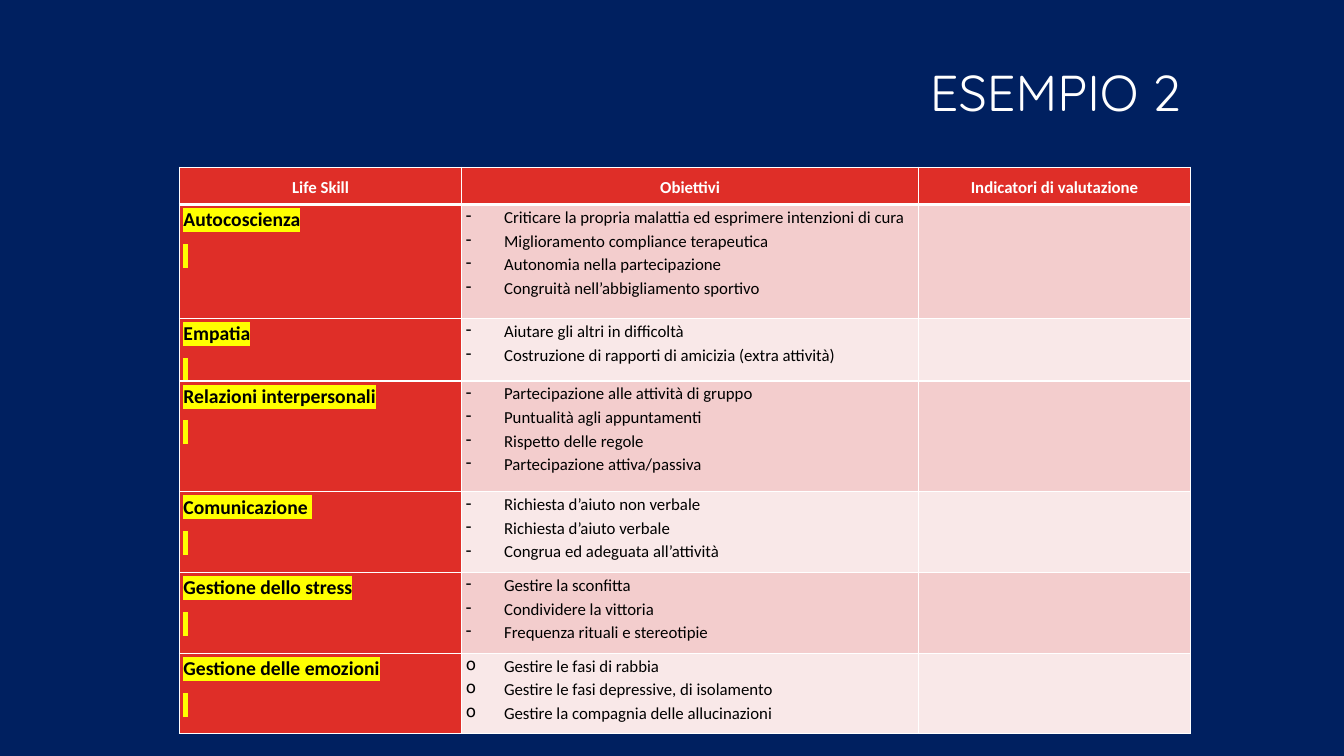
from lxml import etree
from pptx import Presentation
from pptx.dml.color import RGBColor
from pptx.enum.text import MSO_ANCHOR, PP_ALIGN
from pptx.oxml.ns import qn
from pptx.util import Inches, Pt

LEFT, CENTER, RIGHT = PP_ALIGN.LEFT, PP_ALIGN.CENTER, PP_ALIGN.RIGHT
TOP, MIDDLE = MSO_ANCHOR.TOP, MSO_ANCHOR.MIDDLE

COLORS = {
    "navy": "002060",
    "white": "FFFFFF",
    "black": "000000",
    "red": "DF2E28",
    "rose": "F3CDCD",
    "blush": "F9E8E8",
    "yellow": "FFFF00",
}
TITLE = {"name": "Quicksand", "size": Pt(36)}
HEADER = {"name": "Calibri", "size": Pt(12), "bold": True}
SKILL = {"name": "Calibri", "size": Pt(14), "bold": True}
GOAL = {"name": "Calibri", "size": Pt(12), "bold": False}
SPACED = {"line_spacing": 1.15, "space_after": Pt(6)}
TIGHT = {"line_spacing": 1.15, "space_after": Pt(0)}

HEADINGS = ["Life Skill", "Obiettivi", "Indicatori di valutazione"]
COL_WIDTHS = [2.8, 4.53, 2.7]
HEADER_HEIGHT = 0.37
# skill, row height, bullet, goals
SKILLS = [
    ("Autocoscienza", 1.13, "-", [
        "Criticare la propria malattia ed esprimere intenzioni di cura",
        "Miglioramento compliance terapeutica",
        "Autonomia nella partecipazione",
        "Congruità nell’abbigliamento sportivo"]),
    ("Empatia", 0.5, "-", [
        "Aiutare gli altri in difficoltà",
        "Costruzione di rapporti di amicizia (extra attività)"]),
    ("Relazioni interpersonali", 1.1, "-", [
        "Partecipazione alle attività di gruppo",
        "Puntualità agli appuntamenti",
        "Rispetto delle regole",
        "Partecipazione attiva/passiva"]),
    ("Comunicazione ", 0.8, "-", [
        "Richiesta d’aiuto non verbale",
        "Richiesta d’aiuto verbale",
        "Congrua ed adeguata all’attività"]),
    ("Gestione dello stress", 0.8, "-", [
        "Gestire la sconfitta",
        "Condividere la vittoria",
        "Frequenza rituali e stereotipie"]),
    ("Gestione delle emozioni", 0.8, "o", [
        "Gestire le fasi di rabbia",
        "Gestire le fasi depressive, di isolamento",
        "Gestire la compagnia delle allucinazioni"]),
]


def set_all(obj, values):
    for name, value in values.items():
        setattr(obj, name, value)


class SlideBuilder:
    def __init__(self, prs, background):
        self.s = prs.slides.add_slide(prs.slide_layouts[6])
        fill = self.s.background.fill
        fill.solid()
        fill.fore_color.rgb = self.rgb(background)

    def rgb(self, color):
        return RGBColor.from_string(COLORS[color])

    def paragraphs(self, tf, lines, font, color, para, bullet=None, highlight=None):
        for i, line in enumerate(lines):
            p = tf.paragraphs[0] if i == 0 else tf.add_paragraph()
            set_all(p, para)
            if bullet:
                pPr = p._p.get_or_add_pPr()
                pPr.set("marL", str(Inches(0.38)))
                pPr.set("indent", str(-Inches(0.38)))
                etree.SubElement(pPr, qn("a:buChar")).set("char", bullet)
            r = p.add_run()
            r.text = line
            set_all(r.font, font)
            r.font.color.rgb = self.rgb(color)
            if highlight:
                mark = etree.Element(qn("a:highlight"))
                etree.SubElement(mark, qn("a:srgbClr")).set("val", COLORS[highlight])
                r._r.rPr.find(qn("a:solidFill")).addnext(mark)

    def title(self, text, left, top, width, height):
        tf = self.s.shapes.add_textbox(
            Inches(left), Inches(top), Inches(width), Inches(height)).text_frame
        set_all(tf, {"word_wrap": True, "vertical_anchor": MIDDLE})
        self.paragraphs(tf, [text], TITLE, "white",
                        {"alignment": RIGHT, "line_spacing": 0.9})

    def table(self, left, top, widths, heights):
        table = self.s.shapes.add_table(
            len(heights), len(widths), Inches(left), Inches(top),
            Inches(sum(widths)), Inches(sum(heights))).table
        set_all(table, {"first_row": False, "horz_banding": False})
        for col, width in zip(table.columns, widths):
            col.width = Inches(width)
        for row, height in zip(table.rows, heights):
            row.height = Inches(height)
        return table

    def cell(self, cell, fill, anchor=TOP, top=1, bottom=1):
        """Fill and frame a cell; top and bottom are border widths in points."""
        set_all(cell, {"margin_left": Inches(0.04), "margin_right": Inches(0.04),
                       "margin_top": 0, "margin_bottom": 0, "vertical_anchor": anchor})
        cell.fill.solid()
        cell.fill.fore_color.rgb = self.rgb(fill)
        tcPr = cell._tc.get_or_add_tcPr()
        sides = {"lnL": 1, "lnR": 1, "lnT": top, "lnB": bottom}
        for i, (side, width) in enumerate(sides.items()):
            ln = etree.Element(qn(f"a:{side}"), w=str(Pt(width)))
            solid = etree.SubElement(ln, qn("a:solidFill"))
            etree.SubElement(solid, qn("a:srgbClr")).set("val", COLORS["white"])
            tcPr.insert(i, ln)
        return cell.text_frame


def main():
    prs = Presentation()
    prs.slide_width, prs.slide_height = Inches(13.33), Inches(7.5)
    b = SlideBuilder(prs, "navy")
    b.title("ESEMPIO 2", 2.39, 0.24, 9.42, 1.41)

    heights = [HEADER_HEIGHT] + [height for _, height, _, _ in SKILLS]
    table = b.table(1.78, 1.66, COL_WIDTHS, heights)
    for col, heading in enumerate(HEADINGS):
        tf = b.cell(table.cell(0, col), "red", MIDDLE, bottom=3)
        b.paragraphs(tf, [heading], HEADER, "white", {"alignment": CENTER, **SPACED})
    for row, (skill, _, bullet, goals) in enumerate(SKILLS, 1):
        top = 3 if row == 1 else 1
        band = "rose" if row % 2 else "blush"
        tf = b.cell(table.cell(row, 0), "red", top=top)
        b.paragraphs(tf, [skill, " "], SKILL, "black", {"alignment": LEFT, **SPACED},
                     highlight="yellow")
        tf = b.cell(table.cell(row, 1), band, top=top)
        b.paragraphs(tf, goals, GOAL, "black", {"alignment": LEFT, **TIGHT}, bullet=bullet)
        b.cell(table.cell(row, 2), band, top=top)

    prs.save("out.pptx")


if __name__ == "__main__":
    main()
